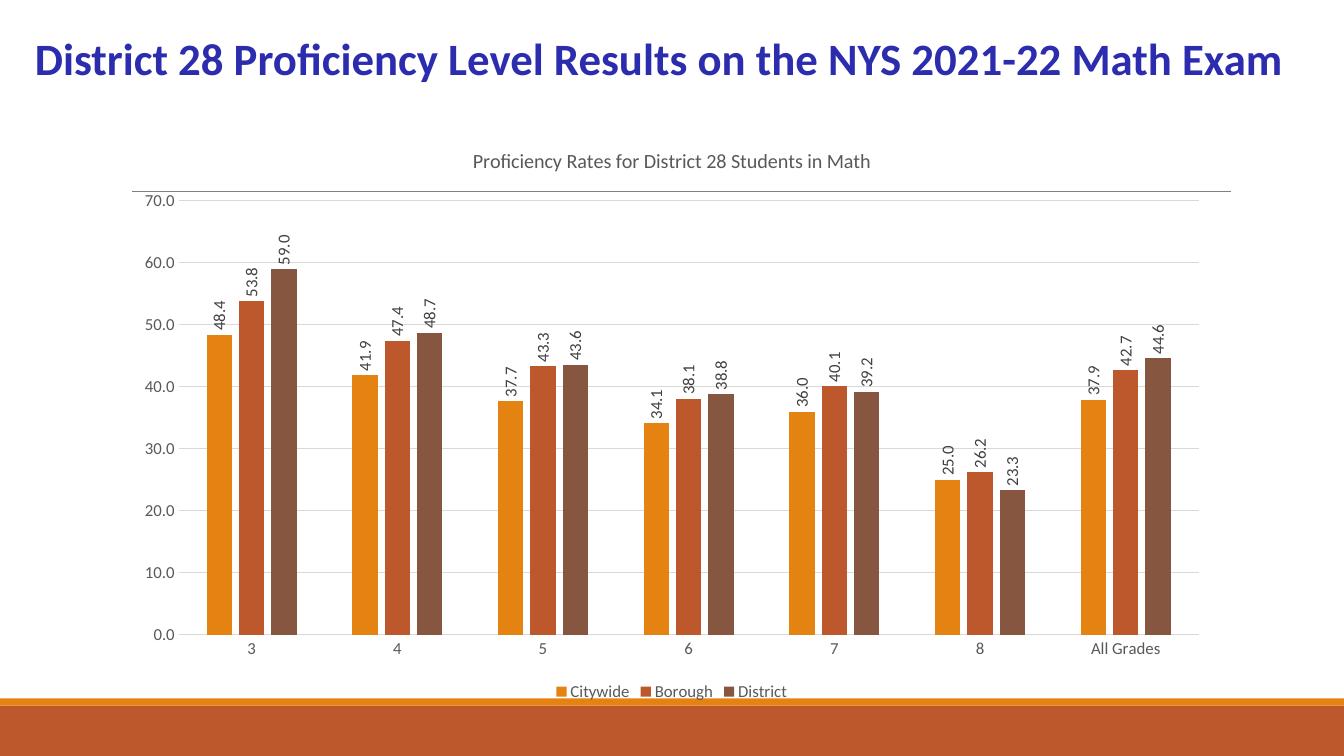
from lxml.etree import SubElement
from pptx import Presentation
from pptx.chart.data import CategoryChartData
from pptx.dml.color import RGBColor
from pptx.enum.chart import XL_CHART_TYPE as ChartType
from pptx.enum.chart import XL_LABEL_POSITION as LabelPos
from pptx.enum.chart import XL_LEGEND_POSITION as LegendPos
from pptx.enum.chart import XL_TICK_MARK as Tick
from pptx.enum.shapes import MSO_CONNECTOR as Connector
from pptx.enum.shapes import MSO_SHAPE as Shape
from pptx.enum.text import MSO_ANCHOR as Anchor
from pptx.enum.text import PP_ALIGN as Align
from pptx.oxml import parse_xml
from pptx.oxml.ns import nsdecls, qn
from pptx.util import Cm, Pt

ORANGE = RGBColor(0xE4, 0x83, 0x12)
RUST = RGBColor(0xBD, 0x58, 0x2C)
BROWN = RGBColor(0x86, 0x56, 0x40)
NAVY = RGBColor(0x2C, 0x2C, 0xAE)
RULE = RGBColor(0x80, 0x80, 0x80)
GRID = RGBColor(0xD9, 0xD9, 0xD9)
AXIS_TEXT = RGBColor(0x59, 0x59, 0x59)
LABEL_TEXT = RGBColor(0x40, 0x40, 0x40)

GRADES = ["3", "4", "5", "6", "7", "8", "All Grades"]
RATES = [
    ("Citywide", ORANGE, [48.4, 41.9, 37.7, 34.1, 36.0, 25.0, 37.9]),
    ("Borough", RUST, [53.8, 47.4, 43.3, 38.1, 40.1, 26.2, 42.7]),
    ("District", BROWN, [59.0, 48.7, 43.6, 38.8, 39.2, 23.3, 44.6]),
]


class SlideBuilder:
    """Draws styled elements on one slide."""

    def __init__(self, slide, font="Calibri"):
        self.slide = slide
        self.font = font

    def style(self, font, size, color, bold=False):
        font.name = self.font
        font.size = Pt(size)
        font.bold = bold
        font.color.rgb = color

    def band(self, x, y, w, h, color):
        sp = self.slide.shapes.add_shape(Shape.RECTANGLE, Cm(x), Cm(y), Cm(w), Cm(h))
        sp.shadow.inherit = False
        sp.fill.solid()
        sp.fill.fore_color.rgb = color
        sp.line.fill.background()

    def rule(self, x1, x2, y):
        line = self.slide.shapes.add_connector(
            Connector.STRAIGHT, Cm(x1), Cm(y), Cm(x2), Cm(y))
        line.line.color.rgb = RULE
        line.line.width = Pt(0.5)
        SubElement(line._element.spPr, qn("a:effectLst"))

    def title(self, text, x, y, w, h):
        tf = self.slide.shapes.add_textbox(Cm(x), Cm(y), Cm(w), Cm(h)).text_frame
        tf.word_wrap = True
        tf.vertical_anchor = Anchor.MIDDLE
        tf.margin_left = tf.margin_right = tf.margin_top = tf.margin_bottom = 0
        tf.text = text
        p = tf.paragraphs[0]
        p.alignment = Align.CENTER
        p.line_spacing = 0.85
        self.style(p.runs[0].font, 32, NAVY, bold=True)

    def axis(self, axis):
        axis.major_tick_mark = axis.minor_tick_mark = Tick.NONE
        self.style(axis.tick_labels.font, 12, AXIS_TEXT)

    def series(self, series, color):
        series.format.fill.solid()
        series.format.fill.fore_color.rgb = color
        series.invert_if_negative = False
        labels = series.data_labels
        labels.show_value = True
        labels.position = LabelPos.OUTSIDE_END
        labels.number_format = "0.0"
        labels.number_format_is_linked = False
        self.style(labels.font, 12, LABEL_TEXT)
        body = labels._element.xpath(".//a:bodyPr")[0]
        body.set("rot", "-5400000")
        body.set("vert", "horz")

    def column_chart(self, heading, x, y, w, h):
        data = CategoryChartData(number_format="0.0")
        data.categories = GRADES
        for name, _, values in RATES:
            data.add_series(name, values)
        chart = self.slide.shapes.add_chart(
            ChartType.COLUMN_CLUSTERED, Cm(x), Cm(y), Cm(w), Cm(h), data).chart
        chart.font.name = self.font
        chart.font.size = Pt(12)
        clear = f"<c:spPr {nsdecls('c', 'a')}><a:noFill/><a:ln><a:noFill/></a:ln></c:spPr>"
        chart._chartSpace.find(qn("c:txPr")).addprevious(parse_xml(clear))

        chart.has_title = True
        tf = chart.chart_title.text_frame
        tf.text = heading
        self.style(tf.paragraphs[0].runs[0].font, 14.4, AXIS_TEXT)
        chart.chart_title.include_in_layout = False

        chart.has_legend = True
        chart.legend.position = LegendPos.BOTTOM
        chart.legend.include_in_layout = False
        self.style(chart.legend.font, 12, AXIS_TEXT)

        grades, rates = chart.category_axis, chart.value_axis
        self.axis(grades)
        self.axis(rates)
        rates.minimum_scale, rates.maximum_scale, rates.major_unit = 0, 70, 10
        rates.tick_labels.number_format = "0.0"
        rates.tick_labels.number_format_is_linked = False
        rates.format.line.fill.background()
        for line in (grades.format.line, rates.major_gridlines.format.line):
            line.color.rgb = GRID
            line.width = Pt(0.75)

        plot = chart.plots[0]
        plot.vary_by_categories = False
        plot.gap_width = 219
        plot.overlap = -27
        for series, (_, color, _) in zip(plot.series, RATES):
            self.series(series, color)


def main():
    prs = Presentation()
    prs.slide_width, prs.slide_height = Cm(33.87), Cm(19.05)
    s = SlideBuilder(prs.slides.add_slide(prs.slide_layouts[6]))
    s.band(0, 17.78, 33.87, 1.27, RUST)
    s.band(0, 17.6, 33.87, 0.18, ORANGE)
    s.rule(3.33, 31.01, 4.83)
    s.title("District 28\u00a0Proficiency Level Results on the NYS 2021-22 Math Exam".replace("\u00a0", " "),
            0.53, 0.91, 32.18, 1.32)
    s.column_chart("Proficiency Rates for District 28 Students in Math",
                   3.1, 3.18, 27.66, 14.6)
    prs.save("out.pptx")


if __name__ == "__main__":
    main()
